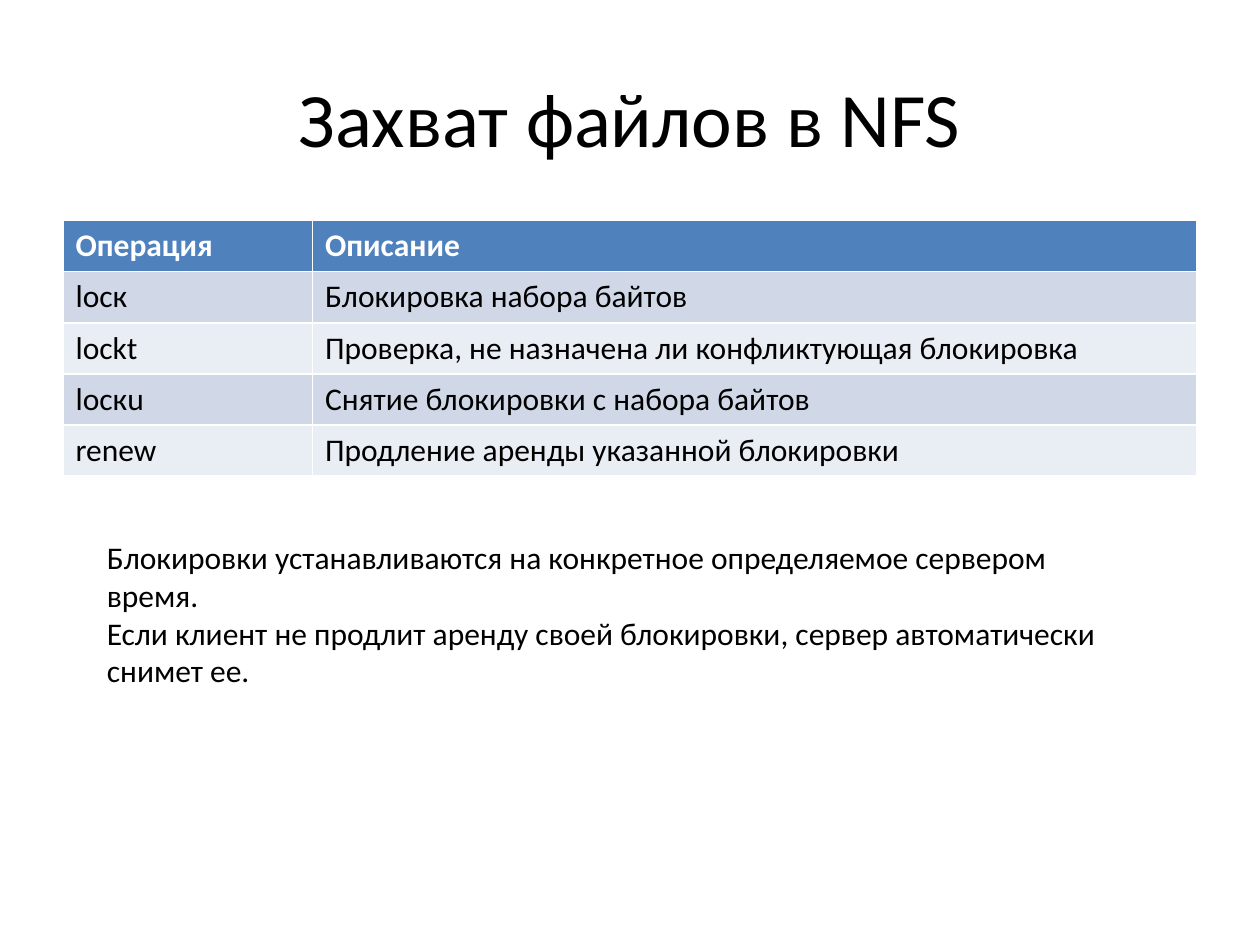
from pptx import Presentation
from pptx.dml.color import RGBColor
from pptx.enum.text import MSO_ANCHOR, MSO_AUTO_SIZE, PP_ALIGN
from pptx.util import Inches, Pt

CENTER = PP_ALIGN.CENTER
MIDDLE = MSO_ANCHOR.MIDDLE
GROW = MSO_AUTO_SIZE.SHAPE_TO_FIT_TEXT

THEME = {
    "font": "Calibri",
    "title": 44,
    "body": 18,
    "ink": "000000",
    "white": "FFFFFF",
    "head": "4F81BD",
    "bands": ("D0D8E8", "E9EDF4"),
}


def style(frame, size, color, bold=False):
    for para in frame.paragraphs:
        for run in para.runs:
            run.font.name = THEME["font"]
            run.font.size = Pt(size)
            run.font.bold = bold
            run.font.color.rgb = RGBColor.from_string(color)


deck = Presentation()
deck.slide_width, deck.slide_height = Inches(10), Inches(7.5)
W, H = deck.slide_width, deck.slide_height
slide = deck.slides.add_slide(deck.slide_layouts[6])
left, width = int(W * 0.05), int(W * 0.9)

# Title
title = slide.shapes.add_textbox(left, int(H * 0.04), width, Inches(1.25)).text_frame
title.word_wrap = True
title.vertical_anchor = MIDDLE
title.text = "Захват файлов в NFS"
title.paragraphs[0].alignment = CENTER
style(title, THEME["title"], THEME["ink"])

# Table of lock operations
rows = [
    ("Операция", "Описание"),
    ("lоск", "Блокировка набора байтов"),
    ("lockt", "Проверка, не назначена ли конфликтующая блокировка"),
    ("lоскu", "Снятие блокировки с набора байтов"),
    ("renew", "Продление аренды указанной блокировки"),
]
table = slide.shapes.add_table(
    len(rows), 2, left, Inches(1.75), width, Inches(2.03)
).table
for col, share in zip(table.columns, (0.22, 0.78)):
    col.width = int(width * share)

for r, row in enumerate(rows):
    head = r == 0
    fill = THEME["head"] if head else THEME["bands"][(r - 1) % 2]
    color = THEME["white"] if head else THEME["ink"]
    for c, text in enumerate(row):
        cell = table.cell(r, c)
        cell.text_frame.text = text
        cell.fill.solid()
        cell.fill.fore_color.rgb = RGBColor.from_string(fill)
        style(cell.text_frame, THEME["body"], color, head)

# Note on lock leases
note = slide.shapes.add_textbox(
    int(W * 0.075), Inches(4.22), int(W * 0.835), Inches(1.31)
).text_frame
note.word_wrap = True
note.auto_size = GROW
note.text = (
    "Блокировки устанавливаются на конкретное определяемое сервером время.\n"
    "Если клиент не продлит аренду своей блокировки, сервер автоматически снимет ее."
)
style(note, THEME["body"], THEME["ink"])

deck.save("out.pptx")
